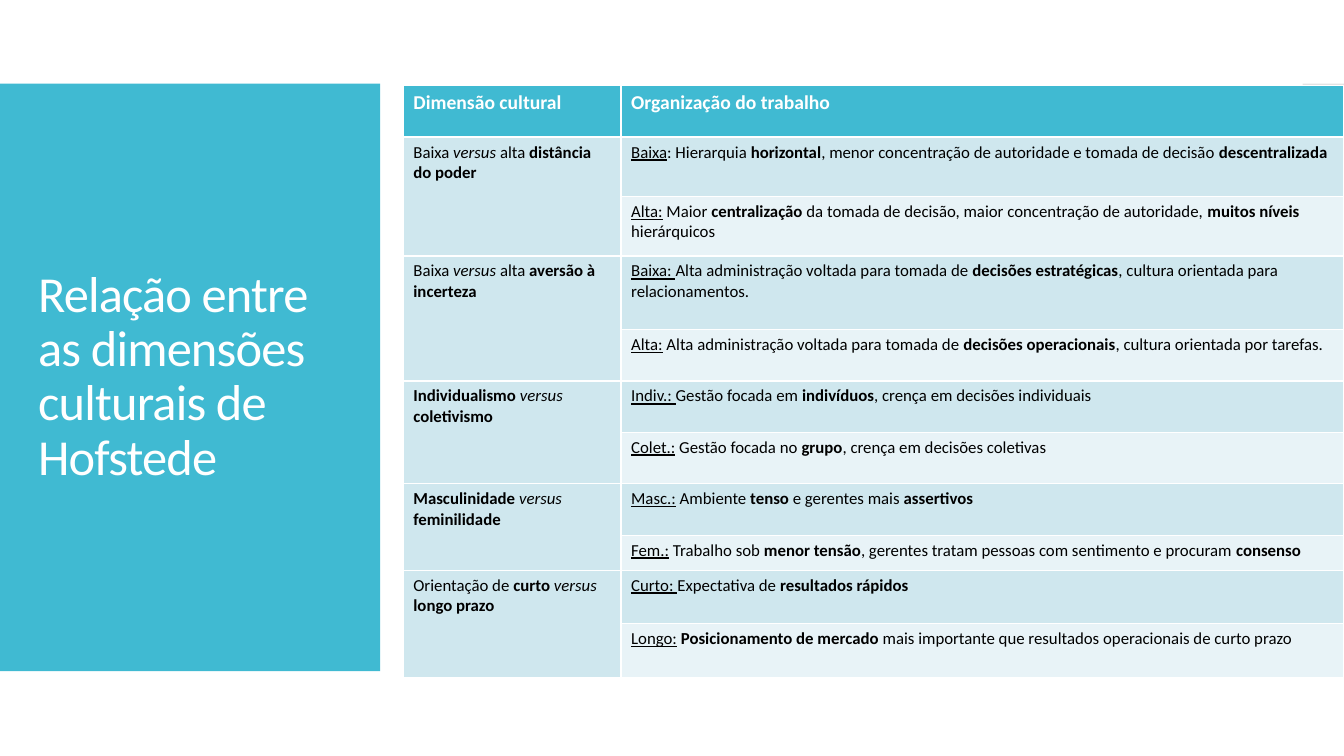
from lxml import etree
from pptx import Presentation
from pptx import util as u
from pptx.dml.color import RGBColor
from pptx.enum import shapes, text
from pptx.oxml.ns import qn

TEAL, WHITE, BLACK, GREY = "40BAD2", "FFFFFF", "000000", "C8C8C8"
BAND_DARK, BAND_LIGHT = "CFE7EE", "E8F3F7"

# A piece between bars may start with a mark: * bold, / italic, _ underlined
MARKS = {"*": "bold", "/": "italic", "_": "underline"}
HEADER = ("*Dimensão cultural", "*Organização do trabalho")
# Dimension, low side, high side
DIMENSIONS = [
    ("Baixa |/versus |alta |*distância do poder",
     "_Baixa|: Hierarquia |*horizontal|, menor concentração de autoridade e tomada de decisão |*descentralizada",
     "_Alta:| Maior |*centralização| da tomada de decisão, maior concentração de autoridade, "
     "|*muitos níveis| hierárquicos"),
    ("Baixa |/versus |alta |*aversão à incerteza",
     "_Baixa: |Alta administração voltada para tomada de |*decisões estratégicas"
     "|, cultura orientada para relacionamentos.",
     "_Alta:| Alta administração voltada para tomada de |*decisões operacionais"
     "|, cultura orientada por tarefas."),
    ("*Individualismo |/versus |*coletivismo",
     "_Indiv.: |Gestão focada em |*indivíduos|, crença em decisões individuais",
     "_Colet.:| Gestão focada no |*grupo|, crença em decisões coletivas"),
    ("*Masculinidade |/versus |*feminilidade",
     "_Masc.:| Ambiente |*tenso| e gerentes mais |*assertivos",
     "_Fem.:| Trabalho sob |*menor tensão|, gerentes tratam pessoas com sentimento e procuram |*consenso"),
    ("Orientação de |*curto |/versus |*longo prazo",
     "_Curto: |Expectativa de |*resultados rápidos",
     "_Longo:| |*Posicionamento de mercado| mais importante que resultados operacionais de curto prazo"),
]
COLUMN_WIDTHS = (2.16, 7.17)
ROW_HEIGHTS = (0.51, 0.59, 0.59, 0.73, 0.51, 0.51, 0.51, 0.51, 0.35, 0.53, 0.53)


def rgb(color):
    return RGBColor.from_string(color)


def inches(*lengths):
    return [u.Inches(length) for length in lengths]


def add_run(paragraph, words, color, **font_values):
    run = paragraph.add_run()
    run.text = words
    run.font.color.rgb = rgb(color)
    for name, value in {"name": "Calibri", **font_values}.items():
        setattr(run.font, name, value)
    return run


def add_block(slide, box, color, opacity=100):
    block = slide.shapes.add_shape(shapes.MSO_SHAPE.RECTANGLE, *inches(*box))
    block.shadow.inherit = False
    block.fill.solid()
    block.fill.fore_color.rgb = rgb(color)
    block.line.fill.background()
    if opacity < 100:
        tint = block.fill._xPr.find(".//" + qn("a:srgbClr"))
        etree.SubElement(tint, qn("a:alpha"), val=str(opacity * 1000))


def add_title_panel(slide, left, top, width, height):
    add_block(slide, (left, top, width, height), TEAL)
    title = slide.shapes.add_textbox(
        *inches(left + 0.28, top + 0.4, width - 0.55, height - 0.8))
    frame = title.text_frame
    frame.word_wrap = True
    frame.vertical_anchor = text.MSO_ANCHOR.MIDDLE
    paragraph = frame.paragraphs[0]
    paragraph.line_spacing = 0.9
    run = add_run(paragraph, "Relação entre as dimensões culturais de Hofstede",
                  WHITE, size=u.Pt(36))
    run.font._element.set("spc", "-60")


def set_borders(cell, **widths):
    properties = cell._tc.get_or_add_tcPr()
    for side in "LRTB":
        width = u.Pt(widths.get(side, 1))
        line = etree.SubElement(properties, qn("a:ln" + side), w=str(width))
        fill = etree.SubElement(line, qn("a:solidFill"))
        etree.SubElement(fill, qn("a:srgbClr"), val=WHITE)


def fill_cell(cell, marked_text, color, size=12, font_color=BLACK):
    cell.fill.solid()
    cell.fill.fore_color.rgb = rgb(color)
    for piece in marked_text.split("|"):
        style = MARKS.get(piece[0])
        add_run(cell.text_frame.paragraphs[0], piece[1:] if style else piece,
                font_color, size=u.Pt(size), **({style: True} if style else {}))


def add_dimension_table(slide, left, top):
    box = inches(left, top, sum(COLUMN_WIDTHS), sum(ROW_HEIGHTS))
    table = slide.shapes.add_table(len(ROW_HEIGHTS), len(COLUMN_WIDTHS), *box).table
    for column, width in zip(table.columns, COLUMN_WIDTHS):
        column.width = u.Inches(width)
    for row, height in zip(table.rows, ROW_HEIGHTS):
        row.height = u.Inches(height)
        for cell in row.cells:
            set_borders(cell, **{"B": 3} if row is table.rows[0] else {})

    # Header
    for index, heading in enumerate(HEADER):
        fill_cell(table.cell(0, index), heading, TEAL, 14, WHITE)

    # Each dimension spans two rows
    for index, (dimension, low, high) in enumerate(DIMENSIONS):
        row = 1 + 2 * index
        table.cell(row, 0).merge(table.cell(row + 1, 0))
        fill_cell(table.cell(row, 0), dimension, BAND_DARK)
        fill_cell(table.cell(row, 1), low, BAND_DARK)
        fill_cell(table.cell(row + 1, 1), high, BAND_LIGHT)


def main():
    presentation = Presentation()
    presentation.slide_width, presentation.slide_height = inches(13.33, 7.5)
    slide = presentation.slides.add_slide(presentation.slide_layouts[6])
    add_title_panel(slide, 0, 0.83, 3.77, 5.83)
    add_block(slide, (12.92, 0.83, 0.41, 5.83), GREY, opacity=50)
    add_dimension_table(slide, 4, 0.85)
    presentation.save("out.pptx")


if __name__ == "__main__":
    main()
